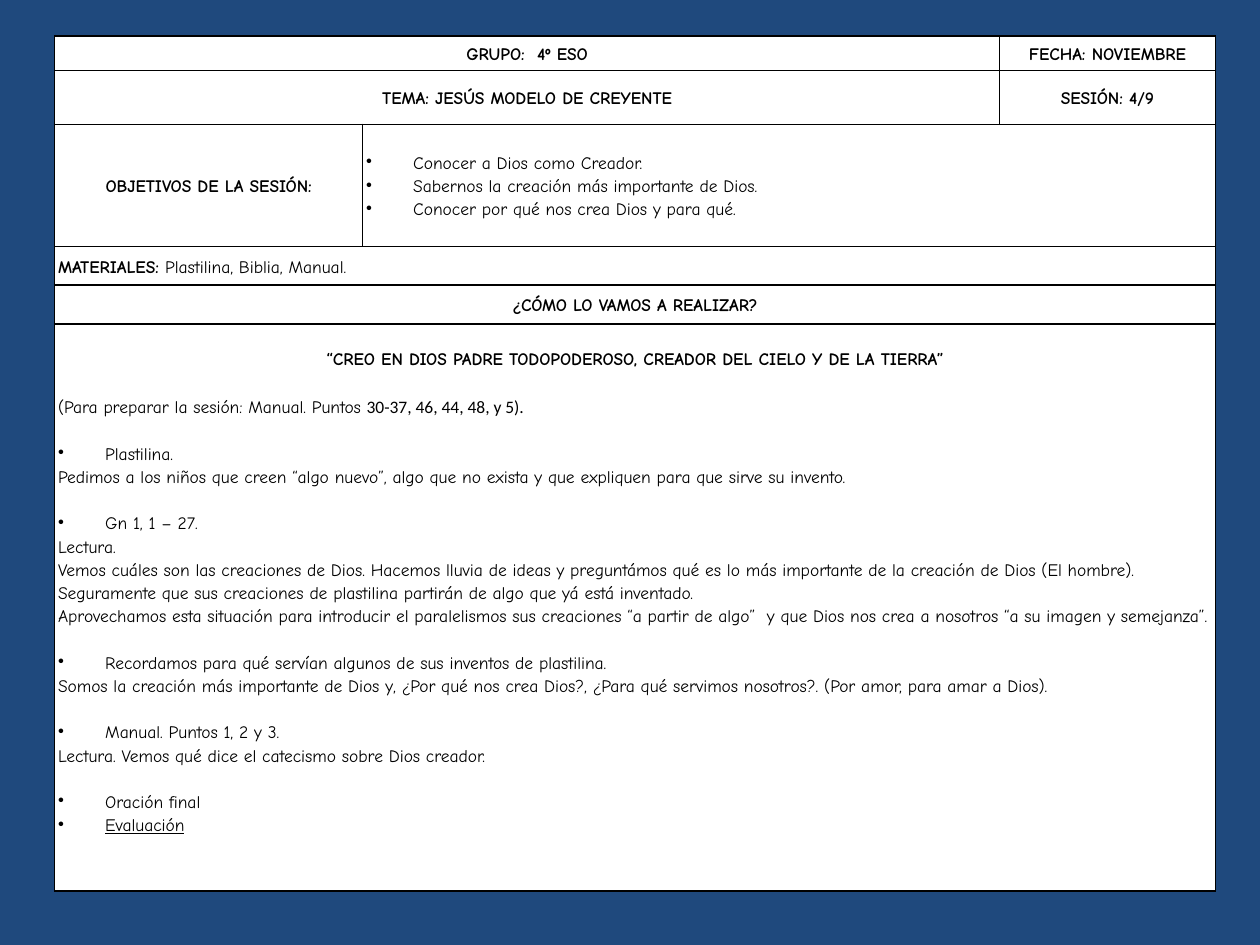
from lxml.etree import SubElement
from pptx import Presentation
from pptx.dml.color import RGBColor as Rgb
from pptx.enum.text import MSO_ANCHOR as Anchor, PP_ALIGN as Align
from pptx.oxml import parse_xml
from pptx.oxml.ns import nsdecls, qn
from pptx.util import Cm, Pt

BLUE, WHITE, BLACK = "1F497D", "FFFFFF", "000000"
FONT = "Comic Neue"
MID = Align.CENTER


def paint(fill, hue):
    fill.solid()
    fill.fore_color.rgb = Rgb.from_string(hue)


class Sheet:
    size = Pt(10)
    lead = 1.15
    gap = Pt(13.3)
    hang = Cm(0.95)
    pad = Cm(0.07)

    def __init__(self, deck):
        self.slide = deck.slides.add_slide(deck.slide_layouts[6])
        paint(self.slide.background.fill, BLUE)

    def table(self, left, top, cols, rows):
        frame = self.slide.shapes.add_table(
            len(rows), len(cols), Cm(left), Cm(top), Cm(sum(cols)), Cm(sum(rows)))
        grid = frame.table
        grid.first_row = grid.horz_banding = False
        for col, wide in zip(grid.columns, cols):
            col.width = Cm(wide)
        for row, high in zip(grid.rows, rows):
            row.height = Cm(high)
        for cell in grid.iter_cells():
            self.box(cell)
        return grid

    def box(self, cell):
        paint(cell.fill, WHITE)
        cell.margin_left = cell.margin_right = self.pad
        cell.margin_top = cell.margin_bottom = 0
        cell.vertical_anchor = Anchor.MIDDLE
        props = cell._tc.get_or_add_tcPr()
        for spot, side in enumerate("LRTB"):
            props.insert(spot, parse_xml(
                f'<a:ln{side} {nsdecls("a")} w="12700"><a:solidFill>'
                f'<a:srgbClr val="{BLACK}"/></a:solidFill></a:ln{side}>'))

    def style(self, run, bold=False, line=False, face=FONT):
        font = run.font
        font.name, font.size = face, self.size
        font.bold, font.underline = bold, line
        font.color.rgb = Rgb.from_string(BLACK)

    def para(self, cell, text, align=Align.LEFT, dot=False, gap=False, **look):
        frame = cell.text_frame
        para = frame.paragraphs[0] if not frame.text else frame.add_paragraph()
        para.text = text
        para.alignment = align
        para.line_spacing = self.lead
        para.space_before = self.gap if gap else 0
        self.style(para.runs[0], **look)
        if dot:
            props = para._p.get_or_add_pPr()
            props.set("marL", str(self.hang))
            props.set("indent", str(-self.hang))
            SubElement(props, qn("a:buChar")).set("char", "•")
        return para

    def more(self, para, text, **look):
        run = para.add_run()
        run.text = text
        self.style(run, **look)


def main():
    deck = Presentation()
    deck.slide_width, deck.slide_height = Cm(25.4), Cm(19.05)
    sheet = Sheet(deck)

    # Grid of the lesson plan
    plan = sheet.table(1.1, 0.73, [6.21, 12.84, 4.35],
                       [0.69, 1.09, 2.46, 0.78, 0.78, 11.43])
    for row, start, end in [(0, 0, 1), (1, 0, 1), (2, 1, 2),
                            (3, 0, 2), (4, 0, 2), (5, 0, 2)]:
        plan.cell(row, start).merge(plan.cell(row, end))

    # Headings
    for row, col, text in [
        (0, 0, "GRUPO:  4º ESO"),
        (0, 2, "FECHA: NOVIEMBRE"),
        (1, 0, "TEMA: JESÚS MODELO DE CREYENTE"),
        (1, 2, "SESIÓN: 4/9"),
        (2, 0, "OBJETIVOS DE LA SESIÓN:"),
        (4, 0, "¿CÓMO LO VAMOS A REALIZAR?"),
    ]:
        sheet.para(plan.cell(row, col), text, MID, bold=True)

    # Goals
    for text in ["Conocer a Dios como Creador.",
                 "Sabernos la creación más importante de Dios.",
                 "Conocer por qué nos crea Dios y para qué."]:
        sheet.para(plan.cell(2, 1), text, dot=True)

    # Materials
    kit = sheet.para(plan.cell(3, 0), "MATERIALES: ", bold=True)
    sheet.more(kit, "Plastilina, Biblia, Manual.")

    # Session: title and preparation
    body = plan.cell(5, 0)
    body.vertical_anchor = Anchor.TOP
    body.margin_top = sheet.gap
    sheet.para(body, "“CREO EN DIOS PADRE TODOPODEROSO, CREADOR DEL CIELO Y DE LA TIERRA”",
               MID, bold=True)
    prep = sheet.para(body, "(Para preparar la sesión: Manual. Puntos ", gap=True)
    sheet.more(prep, "30-37, 46, 44, 48, y 5).", face="Calibri")

    # Session: each step is a bullet with its notes
    steps = [
        ("Plastilina.", [
            "Pedimos a los niños que creen “algo nuevo”, algo que no exista y que "
            "expliquen para que sirve su invento."]),
        ("Gn 1, 1 – 27.", [
            "Lectura.",
            "Vemos cuáles son las creaciones de Dios. Hacemos lluvia de ideas y preguntámos "
            "qué es lo más importante de la creación de Dios (El hombre).",
            "Seguramente que sus creaciones de plastilina partirán de algo que yá está inventado.",
            "Aprovechamos esta situación para introducir el paralelismos sus creaciones "
            "“a partir de algo”  y que Dios nos crea a nosotros “a su imagen y semejanza”."]),
        ("Recordamos para qué servían algunos de sus inventos de plastilina.", [
            "Somos la creación más importante de Dios y, ¿Por qué nos crea Dios?, "
            "¿Para qué servimos nosotros?. (Por amor, para amar a Dios)."]),
        ("Manual. Puntos 1, 2 y 3.", [
            "Lectura. Vemos qué dice el catecismo sobre Dios creador."]),
        ("Oración final", []),
    ]
    for step, notes in steps:
        sheet.para(body, step, dot=True, gap=True)
        for note in notes:
            sheet.para(body, note)
    sheet.para(body, "Evaluación", dot=True, line=True)

    deck.save("out.pptx")


if __name__ == "__main__":
    main()
